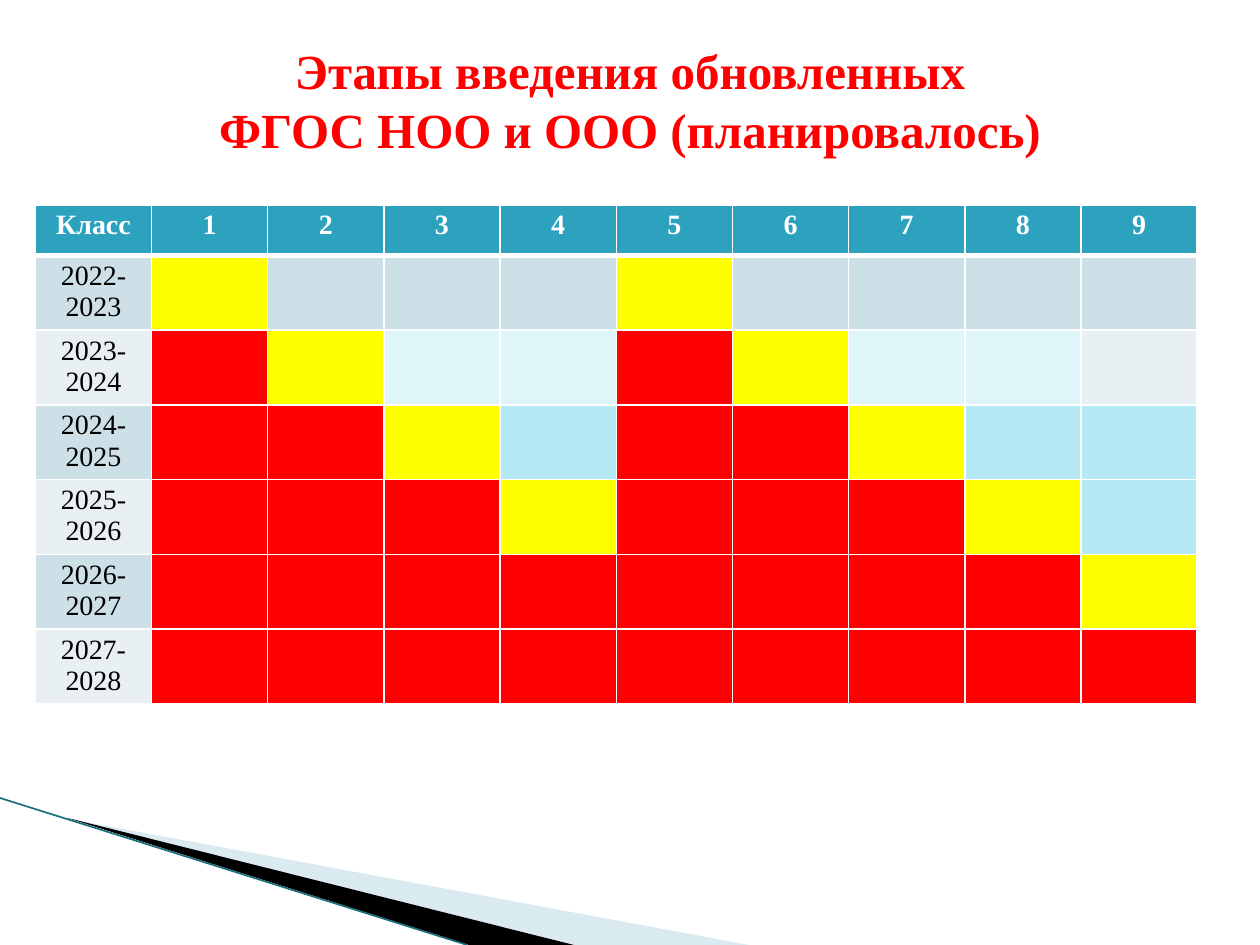
"""Build the slide with the planned stages of introducing the updated school standards."""
from lxml import etree
from pptx import Presentation
from pptx.dml.color import RGBColor
from pptx.enum.shapes import MSO_CONNECTOR
from pptx.enum.text import MSO_ANCHOR, PP_ALIGN
from pptx.oxml.ns import qn
from pptx.util import Pt

CENTER = PP_ALIGN.CENTER
MIDDLE = MSO_ANCHOR.MIDDLE
STRAIGHT = MSO_CONNECTOR.STRAIGHT
FONT = "Times New Roman"
STARTED, CONTINUED = "FFFF00", "FF0000"
HEADER_FILL = "2DA2BF"
BANDS = ["CDE0E8", "E8F0F4"]
PENDING = ["CDE0E8", "DEF5FA", "B5E9F4", "B5E9F4", "B5E9F4", "B5E9F4"]
YEARS = ["2022-2023", "2023-2024", "2024-2025", "2025-2026", "2026-2027", "2027-\n2028"]
HEADINGS = ["Класс"] + [str(grade) for grade in range(1, 10)]


def color(hex_string):
    return RGBColor.from_string(hex_string)


def format_cell(cell, text, fill, text_color, bold, top, bottom):
    cell.text = text
    cell.margin_top = cell.margin_bottom = Pt(2.9)
    for paragraph in cell.text_frame.paragraphs:
        paragraph.alignment = CENTER
        paragraph.font.name = FONT
        paragraph.font.size = Pt(16)
        paragraph.font.bold = bold
        paragraph.font.color.rgb = color(text_color)
    properties = cell._tc.get_or_add_tcPr()
    for side, width in (("lnL", 1), ("lnR", 1), ("lnT", top), ("lnB", bottom)):
        border = etree.SubElement(properties, qn(f"a:{side}"), w=str(Pt(width)))
        border_fill = etree.SubElement(border, qn("a:solidFill"))
        etree.SubElement(border_fill, qn("a:srgbClr"), val="FFFFFF")
    cell.fill.solid()
    cell.fill.fore_color.rgb = color(fill)


deck = Presentation()
deck.slide_width, deck.slide_height = Pt(720), Pt(540)
slide = deck.slides.add_slide(deck.slide_layouts[5])

wedges = [
    ([(39.6, 468), (428, 540), (328, 540)], "A0CBDC", 40),
    ([(38.2, 467.3), (328, 540), (268, 540)], "000000", 100),
]
for points, fill, opacity in wedges:
    corners = [(Pt(x), Pt(y)) for x, y in points]
    builder = slide.shapes.build_freeform(*corners[0])
    builder.add_line_segments(corners[1:])
    wedge = builder.convert_to_shape()
    wedge.shadow.inherit = False
    wedge.fill.solid()
    wedge.fill.fore_color.rgb = color(fill)
    wedge.line.fill.background()
    fill_color = wedge._element.spPr.find(f"{qn('a:solidFill')}/{qn('a:srgbClr')}")
    etree.SubElement(fill_color, qn("a:alpha"), val=str(opacity * 1000))

edge = slide.shapes.add_connector(STRAIGHT, Pt(0), Pt(456), Pt(267), Pt(540))
edge.line.color.rgb = color("1B6E80")
edge.line.width = Pt(0.95)
etree.SubElement(edge._element.spPr, qn("a:effectLst"))

stages = slide.shapes.add_table(
    len(YEARS) + 1, len(HEADINGS), Pt(20.2), Pt(117), Pt(664), Pt(285.2)).table
for column in stages.columns:
    column.width = Pt(66.4)
for row in stages.rows:
    row.height = Pt(42.7)
stages.rows[0].height = Pt(29)

for column, heading in enumerate(HEADINGS):
    format_cell(stages.cell(0, column), heading, HEADER_FILL, "FFFFFF", True, 1, 3)

for index, year in enumerate(YEARS):
    top = 3 if index == 0 else 1
    band = BANDS[index % 2]
    format_cell(stages.cell(index + 1, 0), year, band, "000000", False, top, 1)
    for grade in range(1, 10):
        start = grade - 1 if grade <= 4 else grade - 5
        if index == start:
            fill = STARTED
        elif index > start:
            fill = CONTINUED
        elif index == 1 and grade == 9:
            fill = band
        else:
            fill = PENDING[index]
        format_cell(stages.cell(index + 1, grade), "", fill, "000000", False, top, 1)

title = slide.shapes.title
title.left, title.top, title.width, title.height = Pt(36), Pt(23), Pt(648), Pt(68)
title.text_frame.text = "Этапы введения обновленных\vФГОС НОО и ООО (планировалось)"
title.text_frame.vertical_anchor = MIDDLE
title.text_frame.margin_top = title.text_frame.margin_bottom = Pt(0)
heading_line = title.text_frame.paragraphs[0]
heading_line.alignment = CENTER
heading_line.line_spacing = Pt(33.6)
heading_line.font.name = FONT
heading_line.font.size = Pt(28)
heading_line.font.bold = True
heading_line.font.color.rgb = color("FF0000")

deck.save("out.pptx")
